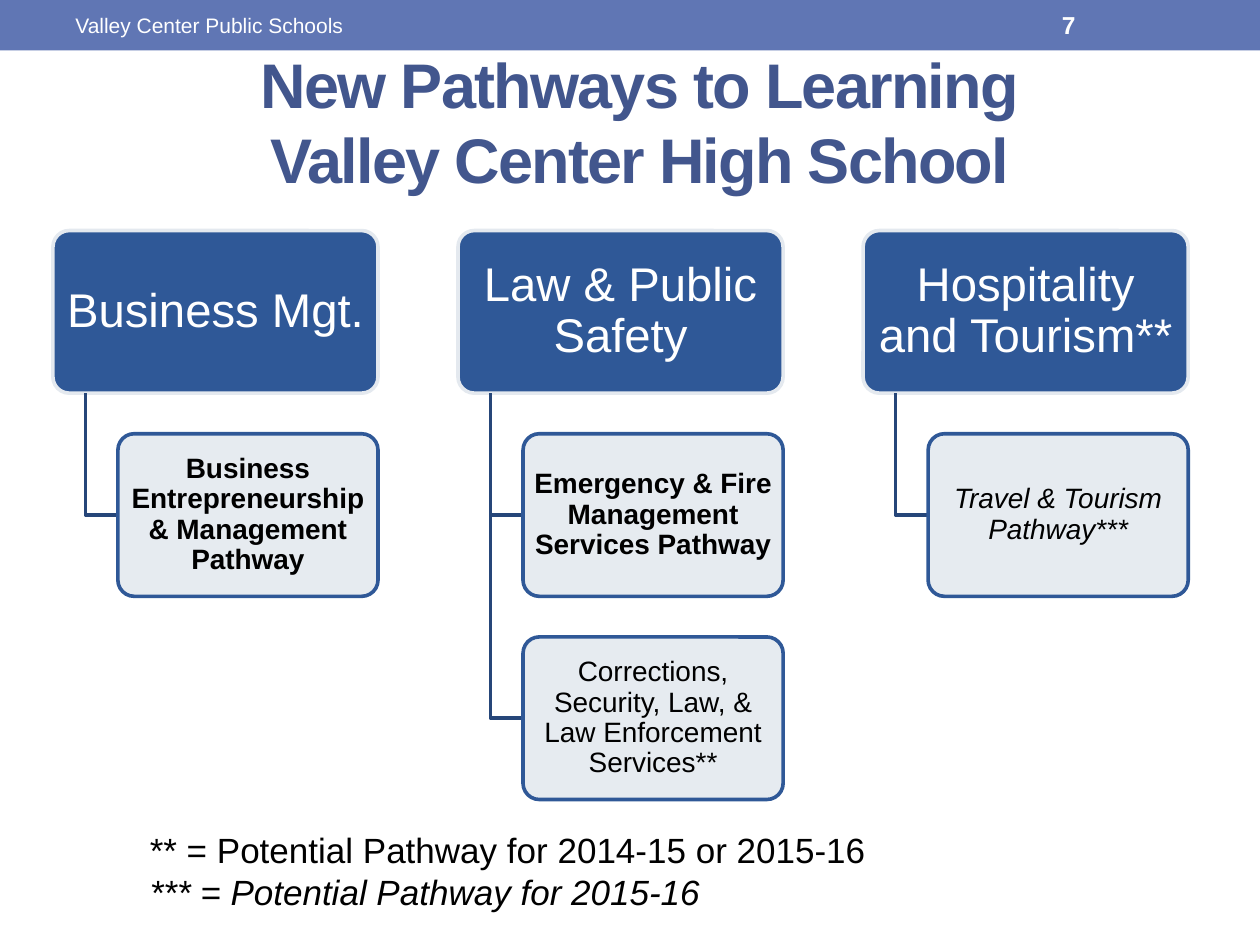
from dataclasses import dataclass

from lxml import etree
from pptx import Presentation
from pptx import util as u
from pptx.dml.color import RGBColor
from pptx.enum import shapes, text
from pptx.oxml import ns

BAND = RGBColor(0x60, 0x76, 0xB4)
TITLE = RGBColor(0x42, 0x56, 0x8D)
NAVY = RGBColor(0x2F, 0x58, 0x97)
BRANCH = RGBColor(0x26, 0x46, 0x79)
PALE = RGBColor(0xE4, 0xE9, 0xEF)
WHITE = RGBColor(0xFF, 0xFF, 0xFF)
BLACK = RGBColor(0x00, 0x00, 0x00)

# Tree grid, in inches
GRID_LEFT, GRID_TOP = 0.42, 1.83
COLUMN_STEP, BOX_HEIGHT = 3.215, 1.29
ROW_STEP = BOX_HEIGHT * 1.25
HEAD_WIDTH = BOX_HEIGHT * 2
CHILD_WIDTH = HEAD_WIDTH * 0.8
TRUNK_INDENT = HEAD_WIDTH * 0.1
CHILD_INDENT = HEAD_WIDTH * 0.2
LINE_WIDTH = u.Pt(2.08)


@dataclass(frozen=True)
class Style:
    size: float
    color: RGBColor
    bold: bool = False
    italic: bool = False


@dataclass(frozen=True)
class Pathway:
    name: str
    bold: bool = False
    italic: bool = False


@dataclass(frozen=True)
class Field:
    name: str
    pathways: tuple[Pathway, ...]


FIELDS = (
    Field("Business Mgt.", (
        Pathway("Business Entrepreneurship & Management Pathway", bold=True),)),
    Field("Law & Public Safety", (
        Pathway("Emergency & Fire Management Services Pathway", bold=True),
        Pathway("Corrections, Security, Law, & Law Enforcement Services**"))),
    Field("Hospitality and Tourism**", (
        Pathway("Travel & Tourism Pathway***", italic=True),)),
)


def add_run(paragraph, words: str, style: Style):
    run = paragraph.add_run()
    run.text = words
    font = run.font
    font.name, font.size = "Arial", u.Pt(style.size)
    font.bold, font.italic = style.bold, style.italic
    font.color.rgb = style.color
    return run


def add_text(slide, left: float, top: float, width: float, height: float,
             anchor=text.MSO_ANCHOR.MIDDLE):
    box = slide.shapes.add_textbox(*map(u.Inches, (left, top, width, height)))
    frame = box.text_frame
    frame.word_wrap = True
    frame.vertical_anchor = anchor
    return frame


def add_header(slide, width: int) -> None:
    band = slide.shapes.add_shape(
        shapes.MSO_SHAPE.RECTANGLE, 0, 0, width, u.Inches(0.4))
    band.shadow.inherit = False
    band.fill.solid()
    band.fill.fore_color.rgb = BAND
    band.line.fill.background()
    for left, box_width, words, style in (
        (0.5, 3.17, "Valley Center Public Schools", Style(12, WHITE)),
        (8.33, 1.17, "7", Style(14, WHITE, bold=True)),
    ):
        frame = add_text(slide, left, 0.02, box_width, 0.36)
        add_run(frame.paragraphs[0], words, style)


def add_title(slide, *lines: str) -> None:
    paragraph = add_text(slide, 0.58, 0.42, 9, 1.08).paragraphs[0]
    paragraph.alignment = text.PP_ALIGN.CENTER
    for index, line in enumerate(lines):
        if index:
            paragraph.add_line_break()
        run = add_run(paragraph, line, Style(36, TITLE, bold=True))
        run.font._element.set("spc", "-100")


def add_box(slide, left: float, top: float, width: float, words: str,
            style: Style, fill: RGBColor, line: RGBColor, inset: float):
    box = slide.shapes.add_shape(
        shapes.MSO_SHAPE.ROUNDED_RECTANGLE,
        *map(u.Inches, (left, top, width, BOX_HEIGHT)))
    box.adjustments[0] = 0.1
    box.shadow.inherit = False
    box.fill.solid()
    box.fill.fore_color.rgb = fill
    box.line.color.rgb = line
    box.line.width = LINE_WIDTH
    frame = box.text_frame
    frame.word_wrap = True
    frame.vertical_anchor = text.MSO_ANCHOR.MIDDLE
    frame.margin_left = frame.margin_right = u.Inches(inset)
    frame.margin_top = frame.margin_bottom = u.Inches(inset * 2 / 3)
    paragraph = frame.paragraphs[0]
    paragraph.alignment = text.PP_ALIGN.CENTER
    paragraph.line_spacing = 0.9
    add_run(paragraph, words, style)
    return box


def set_opacity(shape, percent: int) -> None:
    color = shape.fill._xPr.find(".//" + ns.qn("a:srgbClr"))
    etree.SubElement(color, ns.qn("a:alpha")).set("val", str(percent * 1000))


def add_branch(slide, left: float, top: float, right: float, bottom: float) -> None:
    """Draw an elbow that runs down, then right."""
    x1, y1, x2, y2 = map(u.Inches, (left, top, right, bottom))
    builder = slide.shapes.build_freeform(x1, y1)
    builder.add_line_segments([(x1, y2), (x2, y2)], close=False)
    branch = builder.convert_to_shape()
    branch.shadow.inherit = False
    branch.fill.background()
    branch.line.color.rgb = BRANCH
    branch.line.width = LINE_WIDTH


def add_field(slide, column: int, field: Field) -> None:
    left = GRID_LEFT + column * COLUMN_STEP
    add_box(slide, left, GRID_TOP, HEAD_WIDTH, field.name,
            Style(27, WHITE), NAVY, PALE, 0.06)
    for row, pathway in enumerate(field.pathways, start=1):
        top = GRID_TOP + row * ROW_STEP
        child_left = left + CHILD_INDENT
        add_branch(slide, left + TRUNK_INDENT, GRID_TOP + BOX_HEIGHT,
                   child_left, top + BOX_HEIGHT / 2)
        box = add_box(slide, child_left, top, CHILD_WIDTH, pathway.name,
                      Style(16, BLACK, pathway.bold, pathway.italic),
                      PALE, NAVY, 0.03)
        set_opacity(box, 90)


def add_key(slide) -> None:
    frame = add_text(slide, 1.09, 6.53, 8.08, 0.77, text.MSO_ANCHOR.TOP)
    add_run(frame.paragraphs[0], "** = Potential Pathway for 2014-15 or 2015-16",
            Style(20, BLACK))
    add_run(frame.add_paragraph(), "*** = Potential Pathway for 2015-16",
            Style(20, BLACK, italic=True))


def main() -> None:
    presentation = Presentation()
    presentation.slide_width = u.Inches(10)
    presentation.slide_height = u.Inches(7.5)
    slide = presentation.slides.add_slide(presentation.slide_layouts[6])
    add_header(slide, presentation.slide_width)
    add_title(slide, "New Pathways to Learning", "Valley Center High School")
    for column, field in enumerate(FIELDS):
        add_field(slide, column, field)
    add_key(slide)
    presentation.save("out.pptx")


if __name__ == "__main__":
    main()
